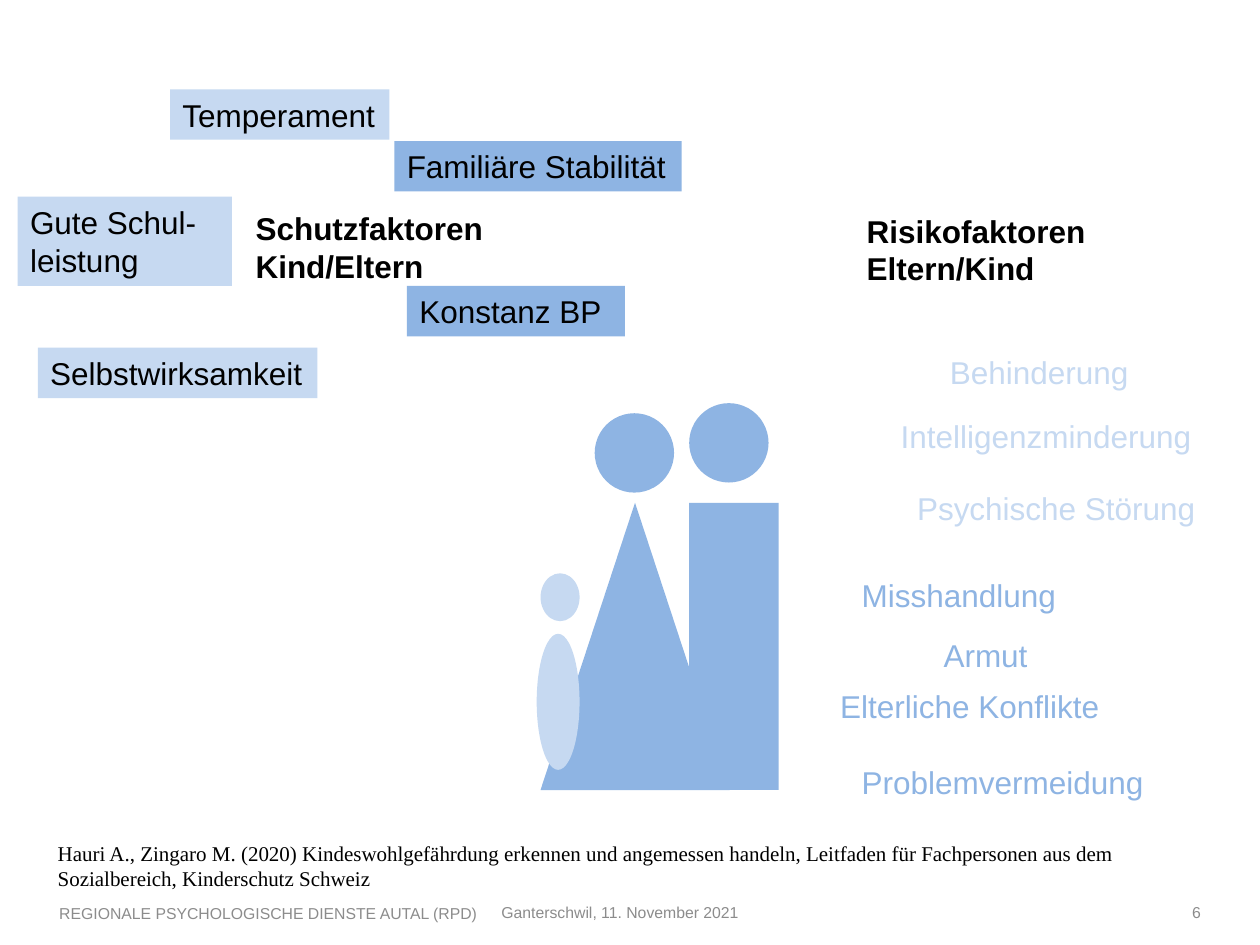
"""Build the slide on protective and risk factors for child and parents."""
from dataclasses import dataclass

from pptx import Presentation
from pptx.dml.color import RGBColor
from pptx.enum.shapes import MSO_SHAPE
from pptx.enum.text import MSO_ANCHOR, MSO_AUTO_SIZE, PP_ALIGN
from pptx.util import Inches, Pt

PARENT = RGBColor(0x8E, 0xB4, 0xE3)
CHILD = RGBColor(0xC6, 0xD9, 0xF1)
BLACK = RGBColor(0, 0, 0)
GREY = RGBColor(0x8C, 0x8C, 0x8C)

COLS, ROWS = 100, 75
CELL = Inches(10) // COLS
LABEL_H = 4
HEAD = 6.3
BODY_Y, BODY_H = 39.9, 22.8


@dataclass(frozen=True)
class Box:
    x: float
    y: float
    w: float
    h: float = LABEL_H

    def emu(self) -> tuple:
        return tuple(round(v * CELL) for v in (self.x, self.y, self.w, self.h))


@dataclass(frozen=True)
class Factor:
    text: str
    box: Box
    color: RGBColor
    wrap: bool = False


@dataclass(frozen=True)
class Part:
    kind: MSO_SHAPE
    box: Box
    color: RGBColor


FIGURES = [
    Part(MSO_SHAPE.FLOWCHART_CONNECTOR, Box(54.7, 32, HEAD, HEAD), PARENT),
    Part(MSO_SHAPE.RECTANGLE, Box(54.7, BODY_Y, 7.1, BODY_H), PARENT),
    Part(MSO_SHAPE.FLOWCHART_CONNECTOR, Box(47.2, 32.8, HEAD, HEAD), PARENT),
    Part(MSO_SHAPE.FLOWCHART_EXTRACT, Box(42.9, BODY_Y, 15, BODY_H), PARENT),
    Part(MSO_SHAPE.OVAL, Box(42.6, 50.3, 3.4, 10.8), CHILD),
    Part(MSO_SHAPE.FLOWCHART_CONNECTOR, Box(42.9, 45.5, 3.1, 3.8), CHILD),
]

PROTECTIVE = [
    Factor("Temperament", Box(13.5, 7.1, 17.4), CHILD),
    Factor("Selbstwirksamkeit", Box(3, 27.6, 22.2), CHILD),
    Factor("Gute Schul- leistung", Box(1.4, 15.6, 17, 7.1), CHILD, wrap=True),
    Factor("Familiäre Stabilität", Box(31.3, 11.2, 22.8), PARENT),
    Factor("Konstanz BP", Box(32.3, 22.7, 17.3), PARENT),
]

RISKS = [
    Factor("Behinderung", Box(74.4, 27.5, 17), CHILD),
    Factor("Intelligenzminderung", Box(70.5, 32.6, 26), CHILD),
    Factor("Psychische Störung", Box(71.8, 38.3, 24.3), CHILD),
    Factor("Misshandlung", Box(67.4, 45.2, 17.6), PARENT),
    Factor("Armut", Box(73.9, 50, 8.8), PARENT),
    Factor("Elterliche Konflikte", Box(65.7, 54, 22.8), PARENT),
    Factor("Problemvermeidung", Box(67.4, 60.1, 24.6), PARENT),
]

HEADINGS = [
    ("Schutzfaktoren Kind/Eltern", Box(19.3, 16.1, 20.5, 7.1)),
    ("Risikofaktoren Eltern/Kind", Box(67.8, 16.3, 20.4, 7.1)),
]

FOOTERS = [
    ("Ganterschwil, 11. November 2021", Box(39.8, 71.1, 28.1, 2.6), PP_ALIGN.LEFT),
    ("REGIONALE PSYCHOLOGISCHE DIENSTE AUTAL (RPD)", Box(4.7, 70.4, 35.1, 4.1), PP_ALIGN.LEFT),
    ("6", Box(83.5, 71.1, 11.8, 2.6), PP_ALIGN.RIGHT),
]

CITATION = (
    "Hauri A., Zingaro M. (2020) Kindeswohlgefährdung erkennen und angemessen handeln, "
    "Leitfaden für Fachpersonen aus dem Sozialbereich, Kinderschutz Schweiz"
)


def add_part(shapes, part: Part) -> None:
    """Draw one filled, unlined part of a figure."""
    sp = shapes.add_shape(part.kind, *part.box.emu())
    sp.shadow.inherit = False
    sp.fill.solid()
    sp.fill.fore_color.rgb = part.color
    sp.line.fill.background()


def add_text(shapes, text: str, box: Box, *, size: float = 18, color: RGBColor = BLACK,
             font: str = "Arial", bold: bool = False, wrap: bool = True,
             align: PP_ALIGN = PP_ALIGN.LEFT, fill: RGBColor | None = None,
             footer: bool = False) -> None:
    """Add a text box with one formatted paragraph."""
    sp = shapes.add_textbox(*box.emu())
    if fill is not None:
        sp.fill.solid()
        sp.fill.fore_color.rgb = fill
    tf = sp.text_frame
    tf.word_wrap = wrap
    if footer:
        tf.margin_left = tf.margin_right = 0
        tf.vertical_anchor = MSO_ANCHOR.MIDDLE
    else:
        tf.auto_size = MSO_AUTO_SIZE.SHAPE_TO_FIT_TEXT
    p = tf.paragraphs[0]
    p.alignment = align
    r = p.add_run()
    r.text = text
    r.font.name, r.font.size, r.font.bold = font, Pt(size), bold
    r.font.color.rgb = color


def main() -> None:
    """Build and save the slide."""
    prs = Presentation()
    prs.slide_width, prs.slide_height = COLS * CELL, ROWS * CELL
    shapes = prs.slides.add_slide(prs.slide_layouts[6]).shapes
    for part in FIGURES:
        add_part(shapes, part)
    for text, box, align in FOOTERS:
        add_text(shapes, text, box, size=9, color=GREY, align=align, footer=True)
    add_text(shapes, CITATION, Box(3.6, 66.2, 92.6, 5), size=12, font="Times New Roman")
    for text, box in HEADINGS:
        add_text(shapes, text, box, bold=True)
    for f in PROTECTIVE:
        add_text(shapes, f.text, f.box, fill=f.color, wrap=f.wrap)
    for f in RISKS:
        add_text(shapes, f.text, f.box, color=f.color, wrap=f.wrap)
    prs.save("out.pptx")


if __name__ == "__main__":
    main()
